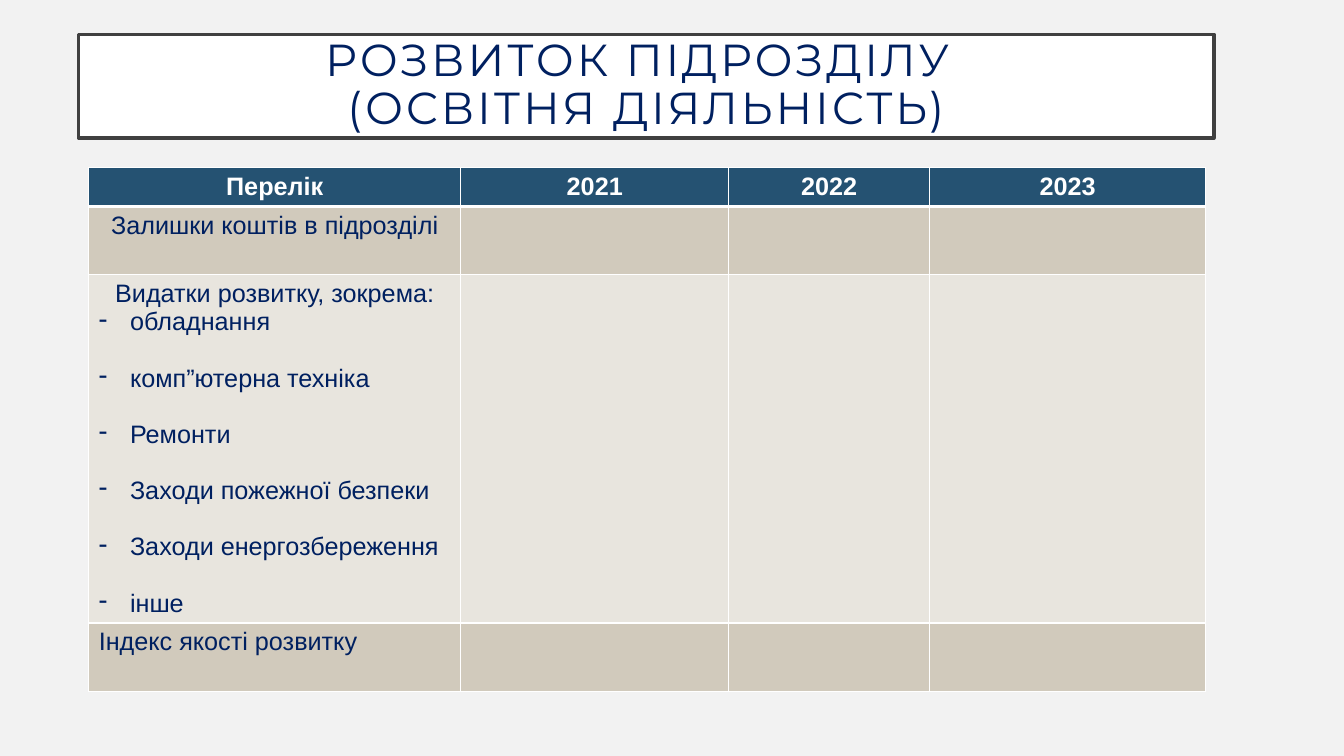
from copy import deepcopy

from lxml.etree import SubElement
from pptx import Presentation
from pptx.dml.color import RGBColor
from pptx.enum.text import MSO_ANCHOR, PP_ALIGN
from pptx.oxml.ns import qn
from pptx.util import Inches, Pt

WIDE, HIGH = Inches(13.33), Inches(7.5)

NAVY = RGBColor(0x00, 0x20, 0x60)
BLUE = RGBColor(0x25, 0x52, 0x72)
SAND = RGBColor(0xD1, 0xCA, 0xBC)
PALE = RGBColor(0xE8, 0xE5, 0xDE)
GREY = RGBColor(0xF2, 0xF2, 0xF2)
DARK = RGBColor(0x40, 0x40, 0x40)
WHITE = RGBColor(0xFF, 0xFF, 0xFF)

# Table grid in percent of the slide's width and height
COLS = [27.68, 19.95, 14.93, 20.56]
ROWS = [5.15, 9.05, 46.05, 9.05]
FILLS = [BLUE, SAND, PALE, SAND]

HEADS = ["Перелік", "2021", "2022", "2023"]
ITEMS = ["обладнання", "комп”ютерна техніка", "Ремонти",
         "Заходи пожежної безпеки", "Заходи енергозбереження", "інше"]


def across(share):
    return round(WIDE * share / 100)


def down(share):
    return round(HIGH * share / 100)


def write(para, text, size=18, face="Arial", color=NAVY, bold=False,
          align=PP_ALIGN.LEFT, track=0):
    """Fill a paragraph; a newline in the text becomes a line break."""
    para.alignment = align
    for i, line in enumerate(text.split("\n")):
        if i:
            para.add_line_break()
        run = para.add_run()
        run.text = line
        font = run.font
        font.size, font.name, font.bold = Pt(size), face, bold
        font.color.rgb = color
        if track:
            font._element.set("spc", str(track * 100))
    for br in para._p.findall(qn("a:br")):
        br.append(deepcopy(font._element))


def dash(para):
    """Give a paragraph a hanging dash bullet."""
    props = para._p.get_or_add_pPr()
    props.set("marL", str(Inches(0.31)))
    props.set("indent", str(-Inches(0.31)))
    SubElement(props, qn("a:buChar")).set("char", "-")


def border(cell, top, base):
    """Draw white lines on the four sides, widths in points."""
    props = cell._tc.get_or_add_tcPr()
    sides = {"L": 1, "R": 1, "T": top, "B": base}
    for i, (side, width) in enumerate(sides.items()):
        line = SubElement(props, qn(f"a:ln{side}"), w=str(Pt(width)))
        fill = SubElement(line, qn("a:solidFill"))
        SubElement(fill, qn("a:srgbClr"), val=str(WHITE))
        props.insert(i, line)


def add_title(slide, text):
    box = slide.shapes.title
    box.left, box.top = across(5.85), down(4.53)
    box.width, box.height = across(84.47), down(13.73)
    box.fill.solid()
    box.fill.fore_color.rgb = WHITE
    box.line.color.rgb = DARK
    box.line.width = Pt(2.5)
    frame = box.text_frame
    frame.word_wrap = True
    frame.vertical_anchor = MSO_ANCHOR.MIDDLE
    frame.margin_left = frame.margin_right = Inches(0.2)
    frame.margin_top = frame.margin_bottom = Inches(0.2)
    para = frame.paragraphs[0]
    para.line_spacing = 0.9
    write(para, text, size=32, face="Montserrat", align=PP_ALIGN.CENTER, track=2)


def add_grid(slide):
    """Add the empty table with its sizes, fills and borders."""
    table = slide.shapes.add_table(
        len(ROWS), len(COLS), across(6.6), down(22.15),
        across(sum(COLS)), down(sum(ROWS))).table
    for col, share in zip(table.columns, COLS):
        col.width = across(share)
    for r, (row, share) in enumerate(zip(table.rows, ROWS)):
        row.height = down(share)
        for cell in row.cells:
            cell.fill.solid()
            cell.fill.fore_color.rgb = FILLS[r]
            border(cell, top=3 if r == 1 else 1, base=3 if r == 0 else 1)
    return table


def add_list(frame, items):
    """Add dashed items below the first paragraph, one line apart."""
    for i, item in enumerate(items):
        para = frame.add_paragraph()
        if i:
            para.space_before = Pt(20)
        write(para, item)
        dash(para)


def main():
    deck = Presentation()
    deck.slide_width, deck.slide_height = WIDE, HIGH
    slide = deck.slides.add_slide(deck.slide_layouts[5])
    slide.background.fill.solid()
    slide.background.fill.fore_color.rgb = GREY

    add_title(slide, "РОЗВИТОК ПІДРОЗДІЛУ \n(ОСВІТНЯ ДІЯЛЬНІСТЬ)")
    table = add_grid(slide)

    # Header row
    for c, head in enumerate(HEADS):
        write(table.cell(0, c).text_frame.paragraphs[0], head,
              color=WHITE, bold=True, align=PP_ALIGN.CENTER)

    # First column
    labels = [("Залишки коштів в підрозділі", PP_ALIGN.CENTER),
              ("Видатки розвитку, зокрема:", PP_ALIGN.CENTER),
              ("Індекс якості розвитку", PP_ALIGN.LEFT)]
    for r, (label, align) in enumerate(labels, 1):
        write(table.cell(r, 0).text_frame.paragraphs[0], label, align=align)
    add_list(table.cell(2, 0).text_frame, ITEMS)

    deck.save("out.pptx")


if __name__ == "__main__":
    main()
